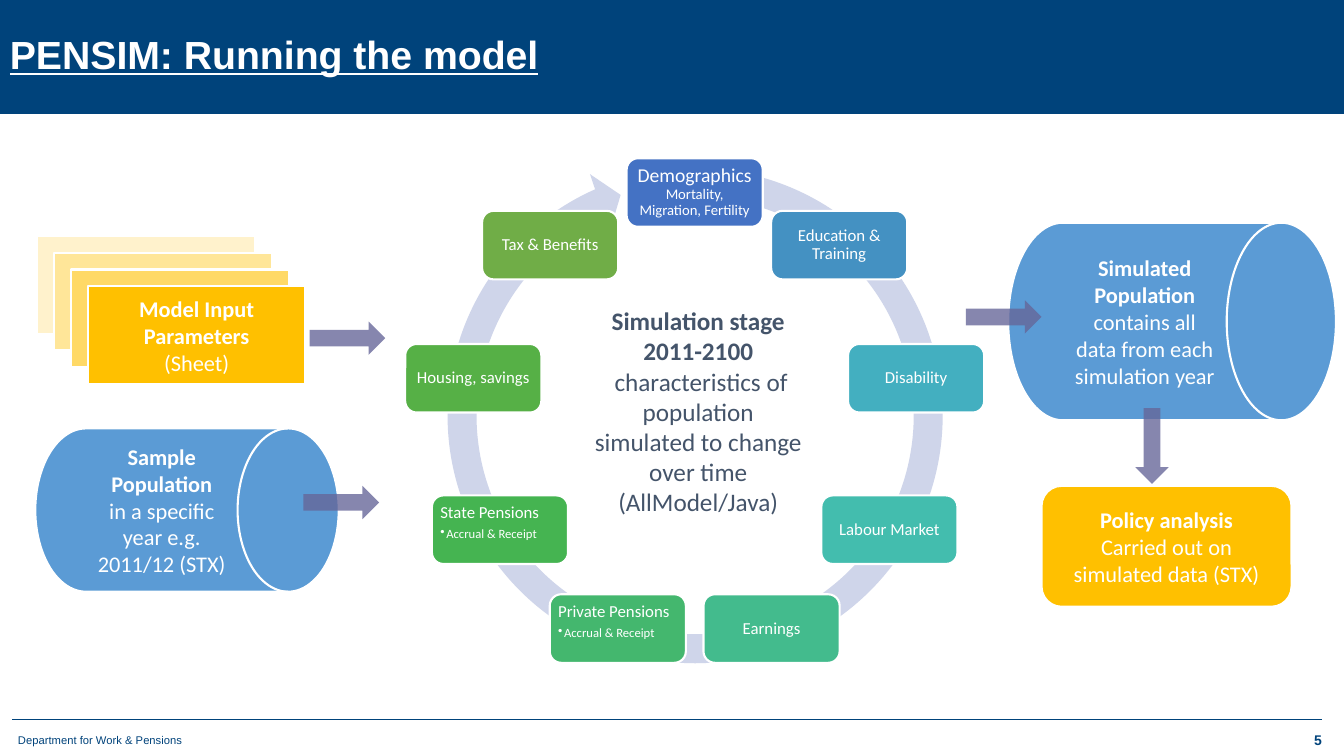
import math
from dataclasses import dataclass, replace

import lxml.etree
import pptx
import pptx.dml.color
import pptx.enum.shapes
import pptx.enum.text
import pptx.oxml
import pptx.oxml.ns
import pptx.util

Inches, Pt = pptx.util.Inches, pptx.util.Pt
Shape = pptx.enum.shapes.MSO_SHAPE
Anchor = pptx.enum.text.MSO_ANCHOR
Align = pptx.enum.text.PP_ALIGN
qn = pptx.oxml.ns.qn


@dataclass(frozen=True)
class Theme:
    navy: str = "00437B"
    white: str = "FFFFFF"
    slate: str = "44546A"
    blue: str = "5B9BD5"
    gold: str = "FFC000"
    arrow: str = "666699"
    ring: str = "CFD5EA"
    sheets: tuple[str, ...] = ("FFF2CC", "FFE699", "FFD966", "FFC000")
    heading_font: str = "Arial"
    body_font: str = "Calibri"
    title: float = 28
    centre: float = 18
    box: float = 16
    node_lead: float = 14
    node: float = 12
    node_note: float = 10.5
    bullet: float = 9
    page: float = 10
    footer: float = 8


T = Theme()


@dataclass(frozen=True)
class Run:
    text: str
    size: float = T.box
    bold: bool = False
    color: str = T.white
    font: str = T.body_font
    underline: bool = False
    break_after: bool = False


@dataclass(frozen=True)
class Para:
    runs: tuple[Run, ...]
    align: Align = Align.CENTER
    spacing: float | None = None
    after: float = 0
    bullet: bool = False


@dataclass(frozen=True)
class Box:
    kind: Shape | None  # None stands for a text box
    at: tuple[float, float, float, float]
    fill: str | None = None
    line: str | None = T.white
    paras: tuple[Para, ...] = ()
    anchor: Anchor = Anchor.MIDDLE
    inset: tuple[float, float] = (0.1, 0.05)
    rotation: float = 0
    alpha: int = 100


@dataclass(frozen=True)
class Node:
    fill: str
    paras: tuple[Para, ...]
    anchor: Anchor = Anchor.MIDDLE


def write_para(p: pptx.text.text._Paragraph, para: Para) -> None:
    p.alignment = para.align
    p.line_spacing = para.spacing
    p.space_after = Pt(para.after)
    if para.bullet:
        p.level = 1
        pPr = p._p.get_or_add_pPr()
        pPr.set("marL", str(Inches(0.06)))
        pPr.set("indent", str(-Inches(0.06)))
        lxml.etree.SubElement(pPr, qn("a:buChar")).set("char", "•")
    for run in para.runs:
        r = p.add_run()
        r.text = run.text
        r.font.name = run.font
        r.font.size = Pt(run.size)
        r.font.bold = run.bold
        r.font.underline = run.underline
        r.font.color.rgb = pptx.dml.color.RGBColor.from_string(run.color)
        if run.break_after:
            p.add_line_break()


def draw(shapes: pptx.shapes.shapetree._BaseGroupShapes, box: Box) -> pptx.shapes.autoshape.Shape:
    at = [Inches(v) for v in box.at]
    sp = shapes.add_shape(box.kind, *at) if box.kind else shapes.add_textbox(*at)
    sp.rotation = box.rotation
    if box.kind:
        sp.shadow.inherit = False
        sp.fill.solid()
        sp.fill.fore_color.rgb = pptx.dml.color.RGBColor.from_string(box.fill)
        if box.alpha < 100:
            clr = sp.element.spPr.find(qn("a:solidFill")).find(qn("a:srgbClr"))
            lxml.etree.SubElement(clr, qn("a:alpha")).set("val", str(box.alpha * 1000))
        if box.line:
            sp.line.color.rgb = pptx.dml.color.RGBColor.from_string(box.line)
            sp.line.width = Pt(1.5)
        else:
            sp.line.fill.background()
    tf = sp.text_frame
    tf.word_wrap = True
    tf.vertical_anchor = box.anchor
    tf.margin_left = tf.margin_right = Inches(box.inset[0])
    tf.margin_top = tf.margin_bottom = Inches(box.inset[1])
    for i, para in enumerate(box.paras):
        write_para(tf.add_paragraph() if i else tf.paragraphs[0], para)
    return sp


def captioned(heading: str, detail: str) -> tuple[Para, ...]:
    """Bold heading with plain detail on the following line."""
    return (Para((Run(heading, bold=True, break_after=True), Run(detail))),)


def label(*runs: Run) -> tuple[Para, ...]:
    return (Para(runs, spacing=0.9),)


def plain_node(fill: str, name: str) -> Node:
    return Node(fill, label(Run(name, T.node)))


def pension_node(fill: str, name: str) -> Node:
    head = Para((Run(name, T.node),), Align.LEFT, 0.9, after=4.2)
    item = Para((Run("Accrual & Receipt", T.bullet),), Align.LEFT, 0.9, bullet=True)
    return Node(fill, (head, item), Anchor.TOP)


NODES = (
    Node("4472C4", label(Run("Demographics", T.node_lead, break_after=True),
                         Run("Mortality, Migration, Fertility", T.node_note))),
    plain_node("4491C2", "Education & Training"),
    plain_node("43AFC0", "Disability"),
    plain_node("43BDAE", "Labour Market"),
    plain_node("43BB8D", "Earnings"),
    pension_node("44B76E", "Private Pensions"),
    pension_node("45B451", "State Pensions"),
    plain_node("56B046", "Housing, savings"),
    plain_node("70AD47", "Tax & Benefits"),
)
DRUM, ROUNDED = Shape.FLOWCHART_DIRECT_ACCESS_STORAGE, Shape.ROUNDED_RECTANGLE
FLOW = Box(Shape.RIGHT_ARROW, (3.07, 3.19, 0.75, 0.33), T.arrow, None, alpha=79)
TITLE = Run("PENSIM: Running the model", T.title, True, font=T.heading_font, underline=True)
FOOTER = Run("Department for Work & Pensions", T.footer, color=T.navy, font=T.heading_font)
PAGE = Run("5", T.page, True, T.navy, T.heading_font)
CENTRE = Run("Simulation stage", T.centre, True, T.slate)
CENTRE_PLAIN = replace(CENTRE, bold=False)

INPUTS = (
    Box(Shape.RECTANGLE, (0, 0, 13.33, 1.13), T.navy, None, (Para((TITLE,), Align.LEFT, 0.9),)),
    Box(DRUM, (0.35, 4.25, 3.01, 1.62), T.blue,
        paras=captioned("Sample Population", "in a specific year e.g. 2011/12 (STX)")),
    FLOW,
    replace(FLOW, at=(3.01, 4.82, 0.75, 0.33)),
)
OUTPUTS = (
    Box(DRUM, (10, 2.21, 3.25, 1.96), T.blue,
        paras=captioned("Simulated Population", "contains all data from each simulation year")),
    Box(ROUNDED, (10.33, 4.82, 2.48, 1.2), T.gold,
        paras=(Para((Run("Policy analysis", bold=True),)),
               Para((Run("Carried out on simulated data (STX)"),)))),
    replace(FLOW, at=(9.58, 2.98, 0.75, 0.33)),
    replace(FLOW, at=(11.05, 4.26, 0.75, 0.33), rotation=90),
    Box(None, (5.75, 2.98, 2.35, 2.22), anchor=Anchor.TOP, paras=(
        Para((CENTRE,)),
        Para((replace(CENTRE, text="2011-2100"),)),
        Para((replace(CENTRE_PLAIN, text=" characteristics of population simulated to change over time"),)),
        Para((replace(CENTRE_PLAIN, text="(AllModel/Java)"),)))),
    Box(None, (0.08, 7.22, 3.39, 0.24), paras=(Para((FOOTER,), Align.LEFT),)),
    Box(None, (10.21, 7.14, 3, 0.4), paras=(Para((PAGE,), Align.RIGHT),)),
)


def draw_rule(s: pptx.slide.Slide) -> None:
    y = Inches(7.14)
    rule = s.shapes.add_connector(pptx.enum.shapes.MSO_CONNECTOR.STRAIGHT,
                                  Inches(0.12), y, Inches(13.11), y)
    rule.line.color.rgb = pptx.dml.color.RGBColor.from_string(T.navy)
    rule.line.width = Pt(0.5)
    lxml.etree.SubElement(rule.element.spPr, qn("a:effectLst"))


def draw_sheets(s: pptx.slide.Slide) -> None:
    group = s.shapes.add_group_shape()
    step = 0.167
    for i, fill in enumerate(T.sheets):
        front = i == len(T.sheets) - 1
        paras = captioned("Model Input Parameters", "(Sheet)") if front else ()
        draw(group.shapes, Box(Shape.RECTANGLE, (0.37 + i * step, 2.34 + i * step, 2.16, 0.97),
                               fill, paras=paras))


def draw_cycle(s: pptx.slide.Slide) -> None:
    """Place the nodes clockwise from the top at equal angles, over the ring arrow."""
    group = s.shapes.add_group_shape()
    ring = draw(group.shapes, Box(Shape.CIRCULAR_ARROW, (4.28, 1.51, 5.23, 5.23), T.ring, None))
    for i, value in enumerate((0.055, 3.307, 147.512, 168.166, 0.058)):
        ring.adjustments[i] = value
    cx, cy, radius, w, h = 6.89, 4.14, 2.23, 1.35, 0.68
    for i, node in enumerate(NODES):
        angle = math.tau * i / len(NODES)
        x, y = cx + radius * math.sin(angle), cy - radius * math.cos(angle)
        draw(group.shapes, Box(ROUNDED, (x - w / 2, y - h / 2, w, h), node.fill,
                               paras=node.paras, anchor=node.anchor, inset=(0.05, 0.05)))


def main() -> None:
    prs = pptx.Presentation()
    prs.slide_width, prs.slide_height = Inches(13.33), Inches(7.5)
    s = prs.slides.add_slide(prs.slide_layouts[6])
    draw_rule(s)
    for box in INPUTS:
        draw(s.shapes, box)
    draw_sheets(s)
    draw_cycle(s)
    for box in OUTPUTS:
        draw(s.shapes, box)
    prs.save("out.pptx")


if __name__ == "__main__":
    main()
